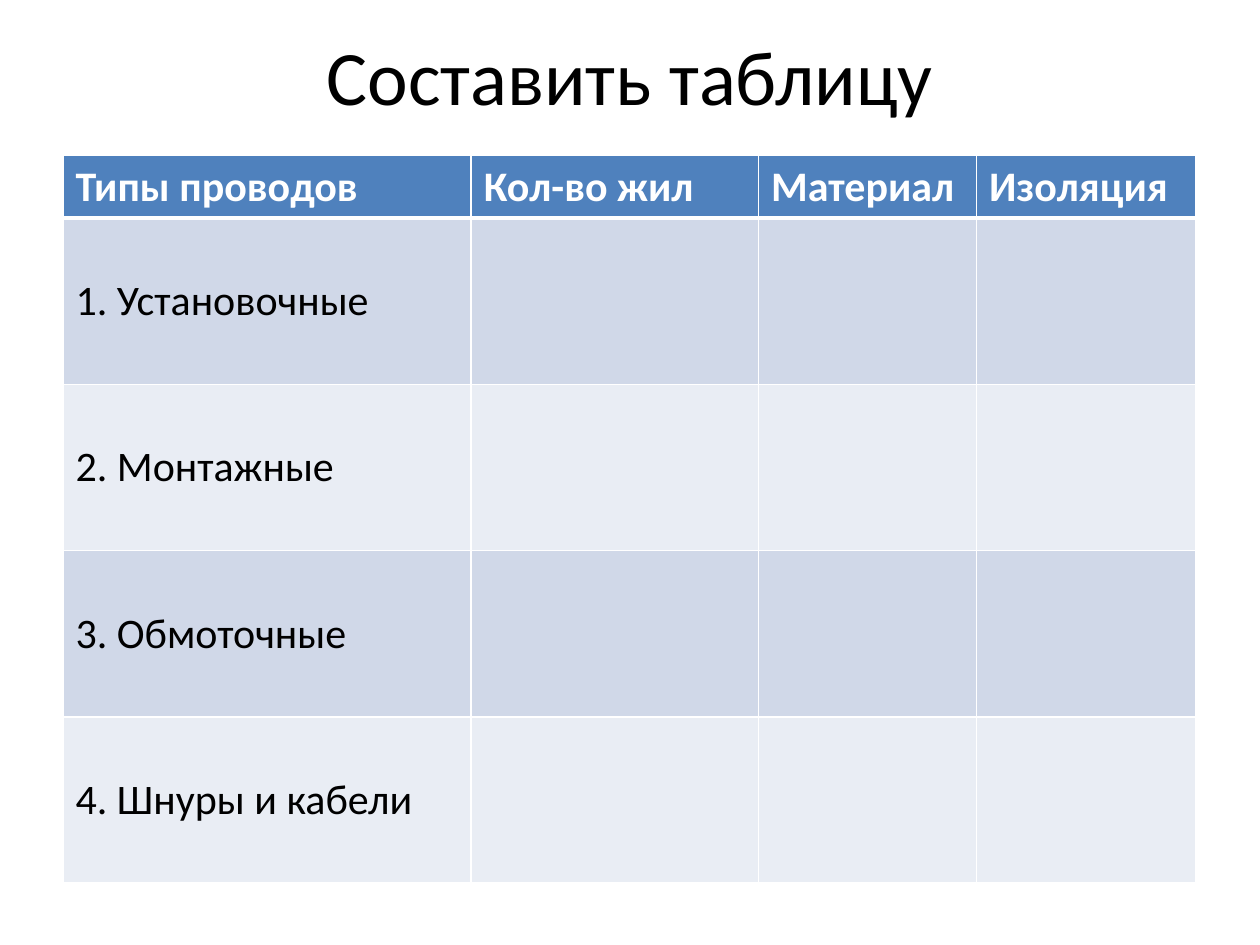
"""Build a slide with a table of wire types to fill in."""
from dataclasses import dataclass

from lxml.etree import SubElement
from pptx import Presentation
from pptx.dml.color import RGBColor
from pptx.enum.text import MSO_ANCHOR as Anchor, PP_ALIGN as Align
from pptx.oxml.ns import qn
from pptx.util import Inches, Pt

FONT = "Calibri"
BLACK = RGBColor(0x00, 0x00, 0x00)
WHITE = RGBColor(0xFF, 0xFF, 0xFF)
BLUE = RGBColor(0x4F, 0x81, 0xBD)
BANDS = (RGBColor(0xD0, 0xD8, 0xE8), RGBColor(0xE9, 0xED, 0xF4))


@dataclass(frozen=True)
class Column:
    head: str
    width: float


@dataclass(frozen=True)
class Look:
    fill: RGBColor
    color: RGBColor
    bold: bool
    top: float
    base: float


COLUMNS = (
    Column("Типы проводов", 3.24),
    Column("Кол-во жил", 2.28),
    Column("Материал", 1.73),
    Column("Изоляция", 1.74),
)
WIRES = ("Установочные", "Монтажные", "Обмоточные", "Шнуры и кабели")
HEAD_H, ROW_H = 0.5, 1.32


def style(frame, size: float, color: RGBColor, bold: bool = False) -> None:
    for para in frame.paragraphs:
        para.font.size = Pt(size)
        for run in para.runs:
            font = run.font
            font.name, font.size, font.bold = FONT, Pt(size), bold
            font.color.rgb = color


def edge(cell, side: str, width: float) -> None:
    props = cell._tc.get_or_add_tcPr()
    line = SubElement(props, qn(f"a:ln{side}"), w=str(Pt(width)))
    fill = SubElement(line, qn("a:solidFill"))
    SubElement(fill, qn("a:srgbClr"), val=str(WHITE))


def draw_cell(cell, text: str, look: Look) -> None:
    for side, width in (("L", 1), ("R", 1), ("T", look.top), ("B", look.base)):
        edge(cell, side, width)
    cell.fill.solid()
    cell.fill.fore_color.rgb = look.fill
    cell.vertical_anchor = Anchor.MIDDLE
    cell.text_frame.text = text
    style(cell.text_frame, 24, look.color, look.bold)


def draw_title(slide, text: str) -> None:
    box = slide.shapes.add_textbox(Inches(0.5), Inches(-0.03), Inches(9), Inches(1.25))
    frame = box.text_frame
    frame.word_wrap = True
    frame.vertical_anchor = Anchor.MIDDLE
    frame.text = text
    frame.paragraphs[0].alignment = Align.CENTER
    style(frame, 44, BLACK)


def draw_table(slide) -> None:
    count = len(WIRES)
    height = HEAD_H + count * ROW_H
    table = slide.shapes.add_table(
        count + 1, len(COLUMNS), Inches(0.5), Inches(1.23), Inches(9), Inches(height)
    ).table
    for row in table.rows:
        row.height = Inches(ROW_H)
    table.rows[0].height = Inches(HEAD_H)
    head = Look(BLUE, WHITE, True, 1, 3)
    for col, item in enumerate(COLUMNS):
        table.columns[col].width = Inches(item.width)
        draw_cell(table.cell(0, col), item.head, head)
        for row, wire in enumerate(WIRES, 1):
            band = BANDS[(row - 1) % 2]
            look = Look(band, BLACK, False, 3 if row == 1 else 1, 1)
            text = f"{row}. {wire}" if col == 0 else ""
            draw_cell(table.cell(row, col), text, look)


def main() -> None:
    deck = Presentation()
    deck.slide_width, deck.slide_height = Inches(10), Inches(7.5)
    slide = deck.slides.add_slide(deck.slide_layouts[6])
    draw_title(slide, "Составить таблицу")
    draw_table(slide)
    deck.save("out.pptx")


if __name__ == "__main__":
    main()
